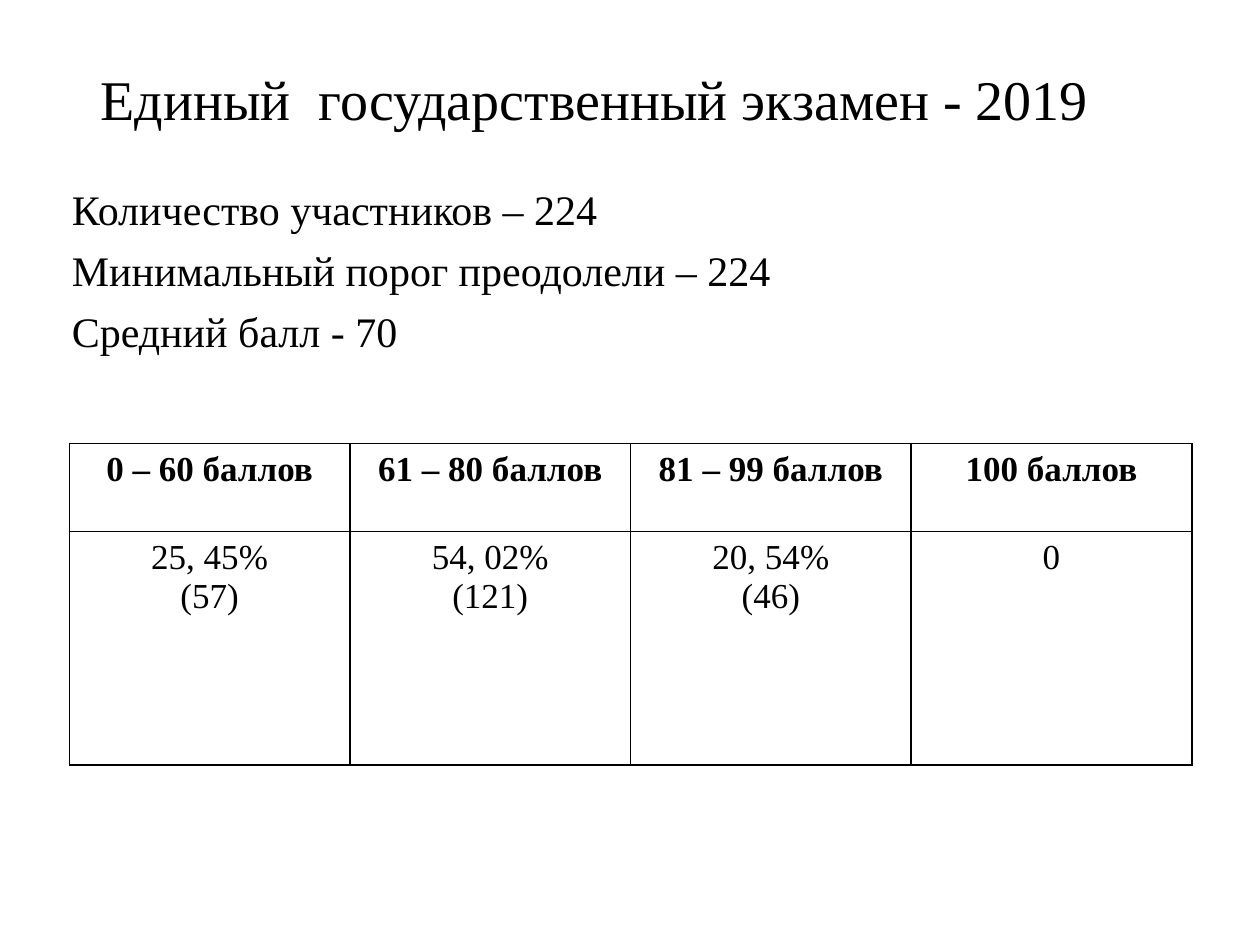
from lxml.etree import SubElement
from pptx import Presentation
from pptx.dml.color import RGBColor
from pptx.enum.text import MSO_ANCHOR, PP_ALIGN
from pptx.oxml.ns import qn
from pptx.util import Inches, Pt

COLORS = {"ink": "000000", "paper": "FFFFFF"}
FONT = "Times New Roman"


def write(frame, lines, size, align, bold=False, space=0):
    """Fill a text frame with one formatted paragraph per line."""
    frame.text = "\n".join(lines)
    for para in frame.paragraphs:
        para.alignment = align
        para.space_before = Pt(space)
        for span in para.runs:
            values = {"name": FONT, "size": Pt(size), "bold": bold}
            for name, value in values.items():
                setattr(span.font, name, value)
            span.font.color.rgb = RGBColor.from_string(COLORS["ink"])


def draw_borders(cell):
    """Give a cell a thin line on every side."""
    props = cell._tc.get_or_add_tcPr()
    for index, side in enumerate(("lnL", "lnR", "lnT", "lnB")):
        line = props.makeelement(qn(f"a:{side}"), {"w": str(Pt(1))})
        fill = SubElement(line, qn("a:solidFill"))
        SubElement(fill, qn("a:srgbClr"), val=COLORS["ink"])
        props.insert(index, line)


deck = Presentation()
deck.slide_width, deck.slide_height = Inches(10), Inches(7.5)
page = deck.slides.add_slide(deck.slide_layouts[0])
title, summary = page.placeholders

# Title and summary
places = [(title, (0.7, 0.31, 8.5, 0.94), MSO_ANCHOR.MIDDLE),
          (summary, (0.47, 1.41, 9.14, 5.55), MSO_ANCHOR.TOP)]
for box, place, anchor in places:
    box.left, box.top, box.width, box.height = map(Inches, place)
    box.text_frame.vertical_anchor = anchor

write(title.text_frame, ["Единый  государственный экзамен - 2019"],
      32, PP_ALIGN.LEFT)
write(summary.text_frame,
      ["Количество участников – 224",
       "Минимальный порог преодолели – 224",
       "Средний балл - 70"],
      24, PP_ALIGN.JUSTIFY, space=6)

# Score table
scores = [
    ("0 – 60 баллов", ["25, 45%", "(57)"]),
    ("61 – 80 баллов", ["54, 02%", "(121)"]),
    ("81 – 99 баллов", ["20, 54%", "(46)"]),
    ("100 баллов", ["0"]),
]
table = page.shapes.add_table(2, len(scores), Inches(0.55), Inches(3.52),
                              Inches(8.91), Inches(2.55)).table
table.rows[0].height, table.rows[1].height = Inches(0.7), Inches(1.85)
for col, (band, result) in enumerate(scores):
    for row, lines in enumerate(([band], result)):
        cell = table.cell(row, col)
        cell.fill.solid()
        cell.fill.fore_color.rgb = RGBColor.from_string(COLORS["paper"])
        draw_borders(cell)
        write(cell.text_frame, lines, 20, PP_ALIGN.CENTER, bold=row == 0)

deck.save("out.pptx")
